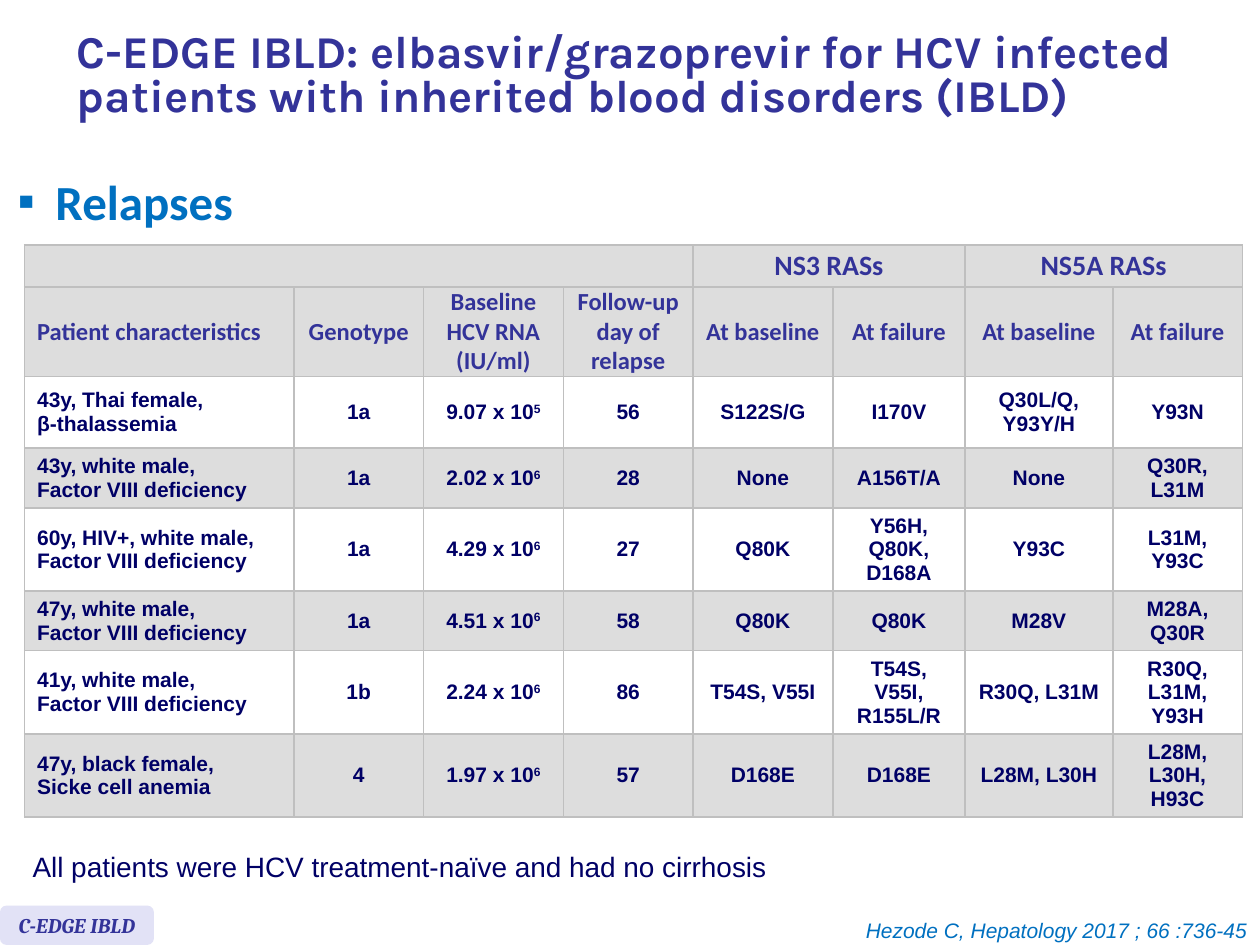
import pptx
import pptx.util
import pptx.dml.color
import pptx.enum.shapes
import pptx.enum.text
import pptx.oxml
import pptx.oxml.ns

Pt = pptx.util.Pt
Align = pptx.enum.text.PP_ALIGN
Anchor = pptx.enum.text.MSO_ANCHOR

# Content; "^" starts a superscript, "\n" a line break
TITLE = ("C-EDGE IBLD: elbasvir/grazoprevir for HCV infected "
         "patients with inherited blood disorders (IBLD)")
HEADING = "Relapses"
GROUPS = [("", 0, 3), ("NS3 RASs", 4, 5), ("NS5A RASs", 6, 7)]
HEADERS = ["Patient characteristics", "Genotype", "Baseline HCV RNA (IU/ml)",
           "Follow-up day of relapse", "At baseline", "At failure", "At baseline", "At failure"]
PATIENTS = [
    ["43y, Thai female,\nβ-thalassemia", "1a", "9.07 x 10^5", "56",
     "S122S/G", "I170V", "Q30L/Q, Y93Y/H", "Y93N"],
    ["43y, white male,\nFactor VIII deficiency", "1a", "2.02 x 10^6", "28",
     "None", "A156T/A", "None", "Q30R, L31M"],
    ["60y, HIV+, white male, Factor VIII deficiency", "1a", "4.29 x 10^6", "27",
     "Q80K", "Y56H, Q80K, D168A", "Y93C", "L31M, Y93C"],
    ["47y, white male,\nFactor VIII deficiency", "1a", "4.51 x 10^6", "58",
     "Q80K", "Q80K", "M28V", "M28A, Q30R"],
    ["41y, white male,\nFactor VIII deficiency", "1b", "2.24 x 10^6", "86",
     "T54S, V55I", "T54S, V55I, R155L/R", "R30Q, L31M", "R30Q, L31M, Y93H"],
    ["47y, black female,\nSicke cell anemia", "4", "1.97 x 10^6", "57",
     "D168E", "D168E", "L28M, L30H", "L28M, L30H, H93C"],
]
NOTE = "All patients were HCV treatment-naïve and had no cirrhosis"
TAG = "C-EDGE IBLD"
CITATION = "Hezode C, Hepatology 2017 ; 66 :736-45"

COLUMN_WIDTHS = [154, 74, 80, 74, 80, 75.5, 84.5, 74]
ROW_HEIGHTS = [24, 51, 41, 34, 47.5, 34, 47.5, 47.5]

THEME = {
    "indigo": "333399", "navy": "000066", "blue": "0070C0", "lilac": "E2E2F6",
    "grey": "DDDDDD", "white": "FFFFFF", "border": "BFBFBF",
    "title": 26, "heading": 28, "group": 16, "header": 14, "cell": 12, "note": 16, "small": 12,
    "title_font": "Karla", "head_font": "Calibri", "text_font": "Arial", "tag_font": "Cambria",
}


def rgb(name):
    return pptx.dml.color.RGBColor.from_string(THEME[name])


def write(frame, text, *, size, font, color, bold=False, italic=False,
          align=Align.LEFT, anchor=None, wrap=True, line=None):
    """Write one paragraph with its format into a text frame."""
    frame.word_wrap = wrap
    if anchor is not None:
        frame.vertical_anchor = anchor
    para = frame.paragraphs[0]
    para.alignment = align
    para.space_before = Pt(0)
    if line:
        para.line_spacing = Pt(line)
    for row, row_text in enumerate(text.split("\n")):
        if row:
            para.add_line_break()
        for level, part in enumerate(row_text.split("^")):
            span = para.add_run()
            span.text = part
            span.font.size = Pt(THEME[size])
            span.font.name = THEME[font]
            span.font.bold = bold
            span.font.italic = italic
            span.font.color.rgb = rgb(color)
            if level:
                span._r.get_or_add_rPr().set("baseline", "30000")
    return para


def place(shape, left, top, width, height):
    shape.left, shape.top, shape.width, shape.height = map(Pt, (left, top, width, height))


def add_bullet(para, char, color, indent):
    properties = para._p.get_or_add_pPr()
    properties.set("marL", str(Pt(indent)))
    properties.set("indent", str(-Pt(indent)))
    namespace = pptx.oxml.ns.nsdecls("a")
    for xml in (f'<a:buClr {namespace}><a:srgbClr val="{THEME[color]}"/></a:buClr>',
                f'<a:buFont {namespace} typeface="Arial"/>',
                f'<a:buChar {namespace} char="{char}"/>'):
        properties.append(pptx.oxml.parse_xml(xml))


def style_cell(cell, fill):
    """Give a cell thin borders on all sides and a plain fill."""
    properties = cell._tc.get_or_add_tcPr()
    for side in ("lnL", "lnR", "lnT", "lnB"):
        properties.append(pptx.oxml.parse_xml(
            f'<a:{side} {pptx.oxml.ns.nsdecls("a")} w="{Pt(1)}"><a:solidFill>'
            f'<a:srgbClr val="{THEME["border"]}"/></a:solidFill></a:{side}>'))
    cell.fill.solid()
    cell.fill.fore_color.rgb = rgb(fill)
    cell.vertical_anchor = Anchor.MIDDLE


def add_relapse_table(page):
    table = page.shapes.add_table(len(ROW_HEIGHTS), len(COLUMN_WIDTHS), Pt(14), Pt(140),
                                  Pt(sum(COLUMN_WIDTHS)), Pt(sum(ROW_HEIGHTS))).table
    table.first_row = table.horz_banding = False
    for column, width in zip(table.columns, COLUMN_WIDTHS):
        column.width = Pt(width)
    for row, height in zip(table.rows, ROW_HEIGHTS):
        row.height = Pt(height)
    for r in range(len(ROW_HEIGHTS)):
        for c in range(len(COLUMN_WIDTHS)):
            cell = table.cell(r, c)
            style_cell(cell, "white" if r > 1 and r % 2 == 0 else "grey")
            if r < 2:
                cell.margin_top = cell.margin_bottom = 0

    # Group row
    for text, first, last in GROUPS:
        cell = table.cell(0, first)
        cell.merge(table.cell(0, last))
        if text:
            write(cell.text_frame, text, size="group", font="head_font", color="indigo",
                  bold=True, align=Align.CENTER)

    # Header row and patient rows
    header = {"size": "header", "font": "head_font", "color": "indigo"}
    body = {"size": "cell", "font": "text_font", "color": "navy"}
    for r, texts in enumerate([HEADERS] + PATIENTS, start=1):
        for c, text in enumerate(texts):
            write(table.cell(r, c).text_frame, text, bold=True,
                  align=Align.CENTER if c else Align.LEFT, **(header if r == 1 else body))


def main():
    deck = pptx.Presentation()
    deck.slide_width, deck.slide_height = Pt(720), Pt(540)
    page = deck.slides.add_slide(deck.slide_layouts[1])

    # Title and heading
    title, heading = page.placeholders
    place(title, 36.7, 5.8, 657.4, 77)
    place(heading, 2.9, 94.3, 348.5, 45)
    for holder in (title, heading):
        holder.text_frame.auto_size = pptx.enum.text.MSO_AUTO_SIZE.NONE
    write(title.text_frame, TITLE, size="title", font="title_font", color="indigo",
          bold=True, anchor=Anchor.MIDDLE, line=25)
    para = write(heading.text_frame, HEADING, size="heading", font="head_font",
                 color="blue", bold=True, anchor=Anchor.TOP)
    add_bullet(para, "▪", "blue", 21.6)

    add_relapse_table(page)

    # Note under the table
    note = page.shapes.add_textbox(Pt(11.5), Pt(481.7), Pt(439), Pt(26.6))
    write(note.text_frame, NOTE, size="note", font="text_font", color="navy", wrap=False)

    # Study tag and citation
    tag = page.shapes.add_shape(pptx.enum.shapes.MSO_SHAPE.ROUNDED_RECTANGLE,
                                Pt(0), Pt(517.5), Pt(88), Pt(22.5))
    tag.shadow.inherit = False
    tag.fill.solid()
    tag.fill.fore_color.rgb = rgb("lilac")
    tag.line.fill.background()
    write(tag.text_frame, TAG, size="small", font="tag_font", color="indigo", bold=True,
          italic=True, align=Align.CENTER, anchor=Anchor.MIDDLE, wrap=False)
    citation = page.shapes.add_textbox(Pt(486), Pt(520.5), Pt(234), Pt(21.6))
    write(citation.text_frame, CITATION, size="small", font="text_font", color="blue",
          italic=True, align=Align.RIGHT, wrap=False)

    deck.save("out.pptx")


if __name__ == "__main__":
    main()
